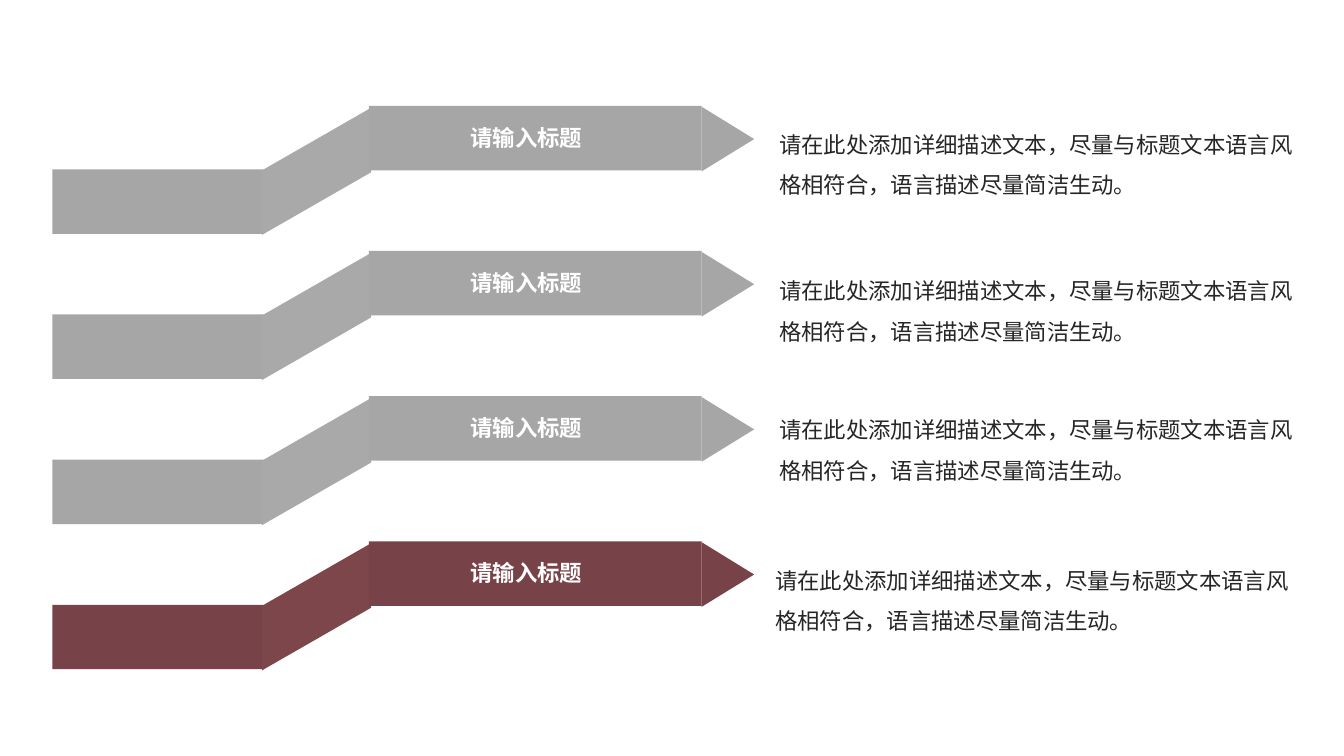
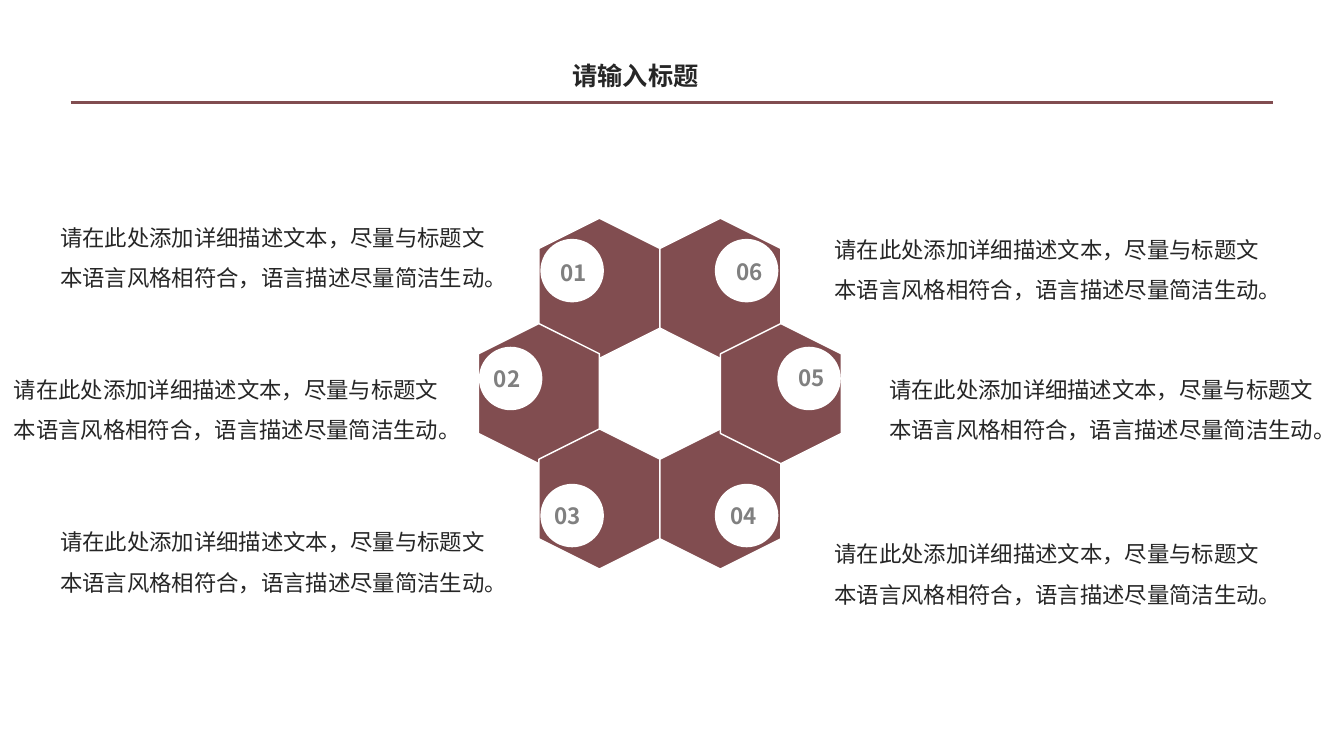
from dataclasses import dataclass

from lxml import etree
from pptx import Presentation
from pptx.dml.color import RGBColor
from pptx.enum import shapes, text
from pptx.oxml import ns
from pptx.util import Inches, Pt


@dataclass(frozen=True)
class Theme:
    font: str = "Noto Sans CJK SC"
    white: str = "FFFFFF"
    ink: str = "262626"
    number: str = "808080"
    wine: str = "814D50"
    ribbon_wine: str = "784348"
    fold_wine: str = "7D464A"
    ribbon_grey: str = "A6A6A6"
    fold_grey: str = "A9A9A9"
    body_size: int = 16
    title_size: int = 18


THEME = Theme()
SHAPE = shapes.MSO_SHAPE
TITLE = "请输入标题"
DESCRIPTION = "请在此处添加详细描述文本，尽量与标题文本语言风格相符合，语言描述尽量简洁生动。"


def apply(target, values):
    for name, value in values.items():
        setattr(target, name, value)


def paint(shape, fill, line=None):
    shape.shadow.inherit = False
    shape.fill.solid()
    shape.fill.fore_color.rgb = RGBColor.from_string(fill)
    if line:
        shape.line.color.rgb = RGBColor.from_string(line)
        shape.line.width = Pt(1)
    else:
        shape.line.fill.background()


def add_block(parent, kind, left, top, width, height, fill, line=None, rotation=0):
    shape = parent.shapes.add_shape(
        kind, Inches(left), Inches(top), Inches(width), Inches(height))
    shape.rotation = rotation
    paint(shape, fill, line)


def add_label(page, content, left, top, width, height, color=THEME.ink,
              size=THEME.body_size, bold=False, **paragraph_format):
    box = page.shapes.add_textbox(
        Inches(left), Inches(top), Inches(width), Inches(height))
    apply(box.text_frame, {"word_wrap": True, "auto_size": text.MSO_AUTO_SIZE.NONE})
    para = box.text_frame.paragraphs[0]
    apply(para, paragraph_format)
    span = para.add_run()
    span.text = content
    apply(span.font, {"size": Pt(size), "bold": bold, "name": THEME.font})
    span.font.color.rgb = RGBColor.from_string(color)
    east_asian = etree.SubElement(span.font._element, ns.qn("a:ea"))
    east_asian.set("typeface", THEME.font)


def add_description(page, left, top, width):
    add_label(page, DESCRIPTION, left, top, width, 0.86, line_spacing=1.5)


def add_rule(page, left, right, top):
    rule = page.shapes.add_connector(
        shapes.MSO_CONNECTOR.STRAIGHT,
        Inches(left), Inches(top), Inches(right), Inches(top))
    rule.line.color.rgb = RGBColor.from_string(THEME.wine)
    rule.line.width = Pt(2)
    etree.SubElement(rule._element.spPr, ns.qn("a:effectLst"))


def add_ribbon(page, top, fill, fold):
    band = 0.64
    group = page.shapes.add_group_shape()
    add_block(group, SHAPE.RECTANGLE, 0.52, top + 0.63, 2.1, band, fill)
    corners = [(2.6, 0.64), (3.68, 0.02), (3.68, 0.66), (2.6, 1.28)]
    points = [(Inches(x), Inches(top + y)) for x, y in corners]
    outline = group.shapes.build_freeform(*points[0])
    outline.add_line_segments(points[1:], close=True)
    paint(outline.convert_to_shape(), fold)
    add_block(group, SHAPE.RECTANGLE, 3.66, top, 3.3, band, fill)
    add_block(group, SHAPE.ISOSCELES_TRIANGLE, 6.9, top + 0.07, band, 0.52,
              fill, rotation=90)
    add_label(page, TITLE, 4.57, top + 0.13, 1.73, 0.37, THEME.white, bold=True)


def build_ribbons(page):
    grey = (THEME.ribbon_grey, THEME.fold_grey)
    wine = (THEME.ribbon_wine, THEME.fold_wine)
    descriptions = [(7.63, 1.12), (7.63, 2.57), (7.63, 3.95), (7.59, 5.44)]
    for row, (left, top) in enumerate(descriptions):
        colors = wine if row == len(descriptions) - 1 else grey
        add_ribbon(page, 1.05 + 1.44 * row, *colors)
        add_description(page, left, top, 5.36)


def build_hexagons(page):
    add_label(page, TITLE, 5.58, 0.55, 2.18, 0.4, size=THEME.title_size,
              bold=True, alignment=text.PP_ALIGN.JUSTIFY)
    add_rule(page, 0.7, 12.63, 1.02)

    pitch, row_step = 1.2, 1.045
    cells = [(0.5, 0), (1.5, 0), (0, 1), (0.5, 2), (1.5, 2), (2, 1)]
    for column, row in cells:
        add_block(page, SHAPE.HEXAGON, 4.65 + pitch * column, 2.26 + row_step * row,
                  1.39, pitch, THEME.wine, THEME.white, 90)

    items = [
        ("01", (5.36, 2.37), (5.46, 2.52), (0.5, 2.04)),
        ("02", (4.75, 3.44), (4.8, 3.57), (0.04, 3.55)),
        ("03", (5.36, 4.8), (5.4, 4.93), (0.5, 5.06)),
        ("04", (7.09, 4.8), (7.15, 4.93), (8.18, 5.18)),
        ("05", (7.71, 3.44), (7.82, 3.56), (8.72, 3.55)),
        ("06", (7.09, 2.37), (7.21, 2.51), (8.18, 2.16)),
    ]
    for number, disc, label, description in items:
        add_block(page, SHAPE.OVAL, *disc, 0.63, 0.63, THEME.white)
        add_label(page, number, *label, 0.53, 0.38, THEME.number, bold=True)
        add_description(page, *description, 4.56)


def main():
    deck = Presentation()
    apply(deck, {"slide_width": Inches(13.33), "slide_height": Inches(7.5)})
    for build in (build_ribbons, build_hexagons):
        build(deck.slides.add_slide(deck.slide_layouts[6]))
    deck.save("out.pptx")


if __name__ == "__main__":
    main()
